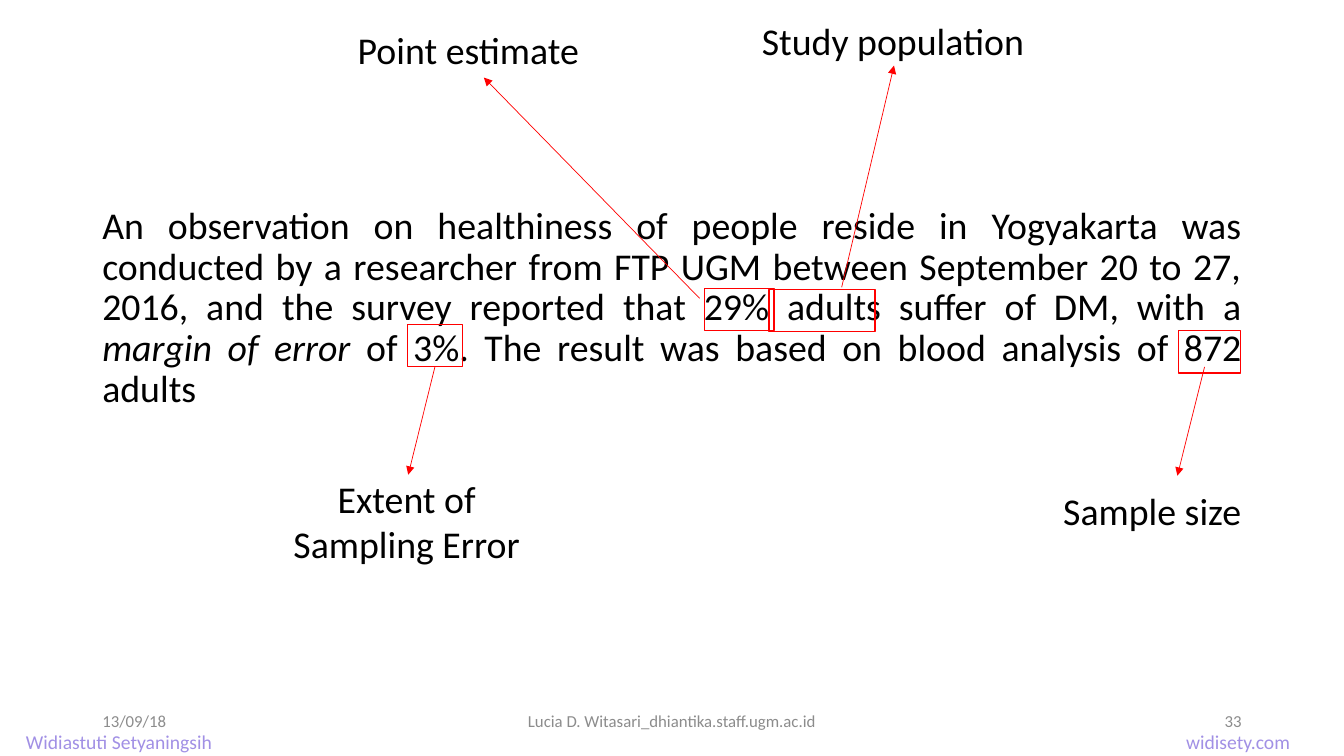
from lxml import etree
from pptx import Presentation
from pptx.dml.color import RGBColor
from pptx.enum.shapes import MSO_CONNECTOR, MSO_SHAPE
from pptx.enum.text import MSO_ANCHOR as ANCHOR, MSO_AUTO_SIZE as FIT, PP_ALIGN as AL
from pptx.oxml.ns import qn
from pptx.util import Pt

COLORS = {"text": "000000", "mark": "FF0000", "footer": "8C8C8C", "credit": "A190E5"}
FONT = "Calibri"
MAIN_SIZE = 27
BOTTOM = 2  # connection site

# Per callout: marked word box, arrow start, arrow end, label box, label, alignment, joined site
CALLOUTS = [
    ((503.3, 205.9, 49.7, 30.2), (499.7, 213.1), (345.6, 55.4),
     (248.4, 15.8, 174.2, 40.3), "Point estimate", AL.LEFT, None),
    ((549.4, 206.6, 75.6, 30.2), (601.2, 205.2), (638.6, 46.8),
     (537.1, 9.4, 203.8, 40.3), "Study population", AL.LEFT, None),
    ((290.9, 231.8, 39.6, 30.2), (310.7, 262), (291.6, 339.1),
     (201.6, 336.2, 177.8, 72.7), "Extent of\nSampling Error", AL.CENTER, BOTTOM),
    ((841.7, 236.2, 44.6, 30.2), (860.4, 262.1), (841, 339.8),
     (751.7, 344.9, 142.6, 40.3), "Sample size", AL.CENTER, None),
]


def color(name):
    return RGBColor.from_string(COLORS[name])


def add_text(s, box, text, size=MAIN_SIZE, fill="text", align=AL.LEFT,
             wrap=True, anchor=ANCHOR.TOP):
    tf = s.shapes.add_textbox(*map(Pt, box)).text_frame
    tf.word_wrap = wrap
    tf.vertical_anchor = anchor
    tf.text = text
    for p in tf.paragraphs:
        p.alignment = align
        for r in p.runs:
            style_run(r, size, fill)
    return tf


def style_run(r, size, fill):
    r.font.name = FONT
    r.font.size = Pt(size)
    r.font.color.rgb = color(fill)


def add_statement(s, box):
    tf = add_text(s, box, "", align=AL.JUSTIFY)
    p = tf.paragraphs[0]
    p.line_spacing = 0.9
    p.space_before = Pt(10)
    parts = [
        ("An observation on healthiness of people reside in Yogyakarta was conducted by "
         "a researcher from FTP UGM between September 20 to 27, 2016, and the survey "
         "reported that 29% adults suffer of DM, with a ", False),
        ("margin of error ", True),
        ("of 3%. The result was based on blood analysis of 872 adults", False),
    ]
    for text, italic in parts:
        r = p.add_run()
        r.text = text
        style_run(r, MAIN_SIZE, "text")
        r.font.italic = italic


def add_callout(s, box, start, end, label_box, label, align, site):
    # Frame around the marked word
    frame = s.shapes.add_shape(MSO_SHAPE.RECTANGLE, *map(Pt, box))
    frame.shadow.inherit = False
    frame.fill.background()
    frame.line.color.rgb = color("mark")
    frame.line.width = Pt(1)

    # Arrow to the label
    arrow = s.shapes.add_connector(MSO_CONNECTOR.STRAIGHT, *map(Pt, start + end))
    if site is not None:
        arrow.begin_connect(frame, site)
    arrow.line.color.rgb = color("mark")
    arrow.line.width = Pt(0.5)
    etree.SubElement(arrow.line._get_or_add_ln(), qn("a:tailEnd"), type="triangle")
    etree.SubElement(arrow._element.spPr, qn("a:effectLst"))

    # Label
    tf = add_text(s, label_box, label, align=align, wrap=False)
    tf.auto_size = FIT.SHAPE_TO_FIT_TEXT


def add_footer(s, box):
    left, top, width, height = box
    # Date, author and slide number
    fields = [
        (0, 216, "13/09/18", AL.LEFT),
        (252, 324, "Lucia D. Witasari_dhiantika.staff.ugm.ac.id", AL.CENTER),
        (width - 216, 216, "33", AL.RIGHT),
    ]
    for x, w, text, align in fields:
        add_text(s, (left + x, top, w, height), text, 12, "footer", align,
                 anchor=ANCHOR.MIDDLE)


def add_credit(s, box):
    tf = add_text(s, box, "Widiastuti Setyaningsih\twidisety.com", 14, "credit")
    tf.auto_size = FIT.SHAPE_TO_FIT_TEXT
    # Right tab for the web address
    tabs = etree.SubElement(tf.paragraphs[0]._p.get_or_add_pPr(), qn("a:tabLst"))
    etree.SubElement(tabs, qn("a:tab"), pos=str(Pt(903)), algn="r")


def main():
    prs = Presentation()
    prs.slide_width, prs.slide_height = Pt(960), Pt(540)
    s = prs.slides.add_slide(prs.slide_layouts[6])
    add_statement(s, (66, 144, 828, 342.7))
    for callout in CALLOUTS:
        add_callout(s, *callout)
    add_credit(s, (11.5, 517.7, 941, 24.2))
    add_footer(s, (66, 500.5, 828, 28.8))
    prs.save("out.pptx")


if __name__ == "__main__":
    main()
